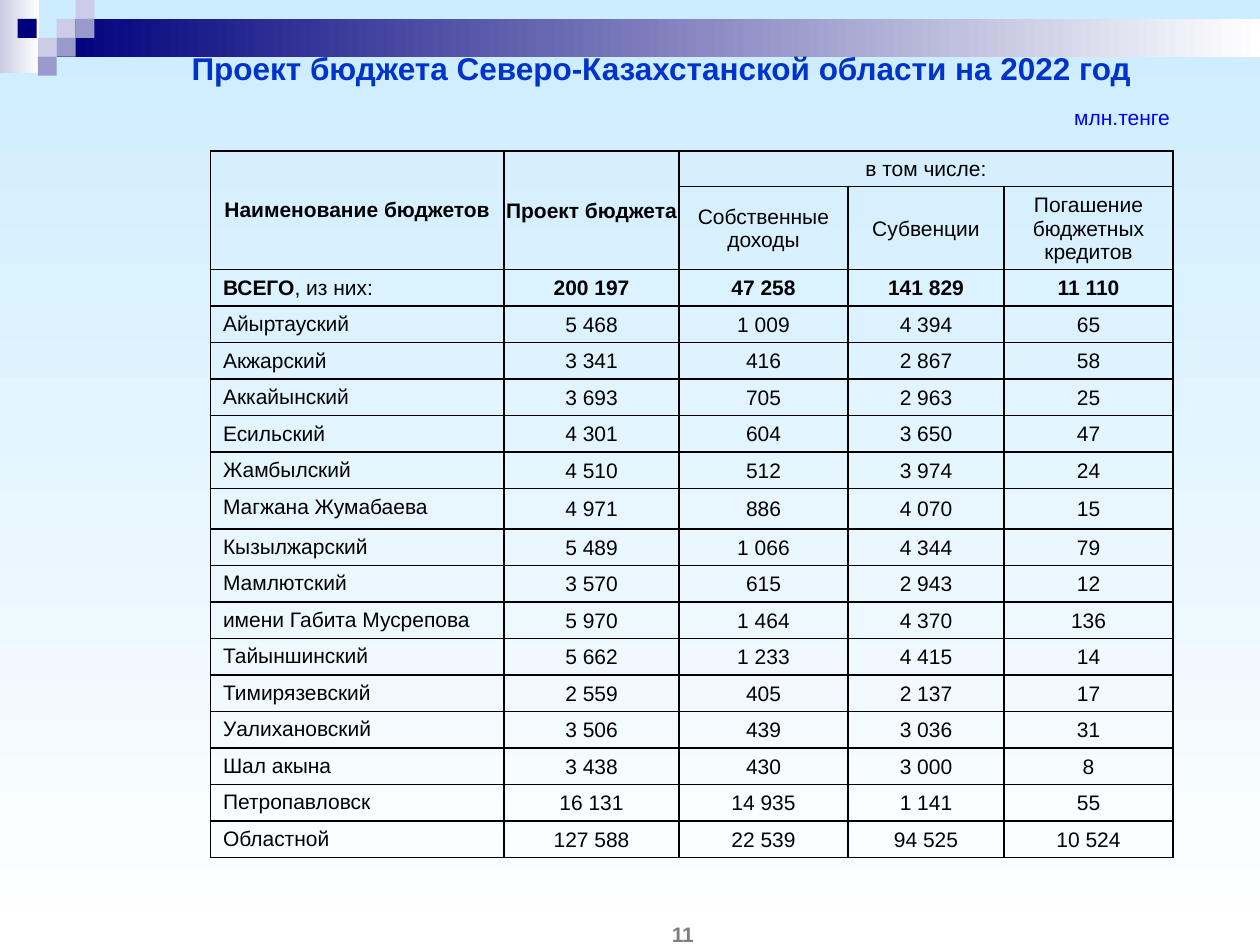
import pptx
import pptx.dml.color
import pptx.enum.shapes
import pptx.enum.text
import pptx.oxml
import pptx.oxml.ns
import pptx.util

Inches = pptx.util.Inches
Align = pptx.enum.text.PP_ALIGN
Anchor = pptx.enum.text.MSO_ANCHOR

COLORS = {
    "sky": "CCECFF", "white": "FFFFFF", "black": "000000", "navy": "00007D",
    "lilac": "CCCCE6", "violet": "9999CC", "title": "0033CC",
    "unit": "0000FF", "number": "7F7F7F",
}

# Small squares of the corner ornament: left, top, colour
SQUARES = [
    (0.45, 0.15, "lilac"), (0.6, 0, "lilac"), (0.6, 0.15, "violet"),
    (0.3, 0.3, "lilac"), (0.14, 0.15, "navy"), (0.45, 0.3, "violet"),
    (0.3, 0.45, "violet"),
]

COLUMN_WIDTHS = [2.33, 1.39, 1.34, 1.24, 1.34]
HEADER_HEIGHTS = [0.28, 0.66]
ROW_HEIGHT = 0.29
TALL_ROW, TALL_HEIGHT = "Магжана Жумабаева", 0.32
NAME_INSETS = (0.1, 0.05, 0.1, 0.05)
VALUE_INSETS = (0.01, 0.01, 0.01, 0)

# Header cells: row, column, last row, last column, text, bold, insets
HEADERS = [
    (0, 0, 1, 0, "Наименование бюджетов", True, NAME_INSETS),
    (0, 1, 1, 1, "Проект бюджета", True, VALUE_INSETS),
    (0, 2, 0, 4, "в том числе:", False, VALUE_INSETS),
    (1, 2, 1, 2, "Собственные доходы", False, VALUE_INSETS),
    (1, 3, 1, 3, "Субвенции", False, VALUE_INSETS),
    (1, 4, 1, 4, "Погашение бюджетных кредитов", False, VALUE_INSETS),
]

TOTAL_NAME = [("ВСЕГО", True), (", из них:", False)]
TOTAL_VALUES = ["200 197", "47 258", "141 829", "11 110"]
BUDGETS = [
    ("Айыртауский", "5 468", "1 009", "4 394", "65"),
    ("Акжарский", "3 341", "416", "2 867", "58"),
    ("Аккайынский", "3 693", "705", "2 963", "25"),
    ("Есильский", "4 301", "604", "3 650", "47"),
    ("Жамбылский", "4 510", "512", "3 974", "24"),
    ("Магжана Жумабаева", "4 971", "886", "4 070", "15"),
    ("Кызылжарский", "5 489", "1 066", "4 344", "79"),
    ("Мамлютский", "3 570", "615", "2 943", "12"),
    ("имени Габита Мусрепова", "5 970", "1 464", "4 370", "136"),
    ("Тайыншинский", "5 662", "1 233", "4 415", "14"),
    ("Тимирязевский", "2 559", "405", "2 137", "17"),
    ("Уалихановский", "3 506", "439", "3 036", "31"),
    ("Шал акына", "3 438", "430", "3 000", "8"),
    ("Петропавловск", "16 131", "14 935", "1 141", "55"),
    ("Областной", "127 588", "22 539", "94 525", "10 524"),
]


def rgb(name):
    return pptx.dml.color.RGBColor.from_string(COLORS[name])


def write_text(frame, text, size=12, color="black", bold=False, align=Align.CENTER):
    """Fill the first paragraph; text is a string or a list of (string, bold)."""
    frame.word_wrap = True
    para = frame.paragraphs[0]
    para.alignment = align
    pieces = [(text, bold)] if isinstance(text, str) else text
    for words, weight in pieces:
        span = para.add_run()
        span.text = words
        span.font.name = "Arial"
        span.font.size = pptx.util.Pt(size)
        span.font.bold = weight
        span.font.color.rgb = rgb(color)


def set_insets(target, insets):
    target.margin_left, target.margin_top, target.margin_right, target.margin_bottom = map(Inches, insets)


def fill_gradient(fill, start, end, angle=0):
    fill.gradient()
    fill.gradient_angle = angle
    for stop, position, color in zip(fill.gradient_stops, (0, 1), (start, end)):
        stop.position = position
        stop.color.rgb = rgb(color)


def add_block(page, left, top, width, height, color, fade_to=None):
    block = page.shapes.add_shape(
        pptx.enum.shapes.MSO_SHAPE.RECTANGLE,
        Inches(left), Inches(top), Inches(width), Inches(height))
    block.shadow.inherit = False
    block.line.fill.background()
    if fade_to:
        fill_gradient(block.fill, color, fade_to)
    else:
        block.fill.solid()
        block.fill.fore_color.rgb = rgb(color)


def add_ornament(page):
    add_block(page, 0, 0, 0.31, 0.58, "lilac", fade_to="white")
    add_block(page, 0.45, 0.15, 9.55, 0.3, "navy", fade_to="white")
    for left, top, color in SQUARES:
        add_block(page, left, top, 0.15, 0.15, color)


def add_title(page, text):
    title = page.shapes.title
    title.left, title.top, title.width, title.height = map(Inches, (1.42, 0.46, 7.88, 0.43))
    frame = title.text_frame
    frame.auto_size = pptx.enum.text.MSO_AUTO_SIZE.NONE
    frame.vertical_anchor = Anchor.MIDDLE
    set_insets(frame, (0, 0.05, 0.22, 0.32))
    write_text(frame, text, size=18, color="title", bold=True)
    # Bring the title in front of the ornament
    page.shapes._spTree.append(title._element)


def add_label(page, text, left, top, width, height, anchor=Anchor.TOP, **text_format):
    box = page.shapes.add_textbox(Inches(left), Inches(top), Inches(width), Inches(height))
    set_insets(box.text_frame, (0, 0, 0, 0))
    box.text_frame.vertical_anchor = anchor
    write_text(box.text_frame, text, **text_format)


def set_borders(cell):
    properties = cell._tc.get_or_add_tcPr()
    for index, side in enumerate(("lnL", "lnR", "lnT", "lnB")):
        line = pptx.oxml.parse_xml(
            f'<a:{side} {pptx.oxml.ns.nsdecls("a")} w="12700"><a:solidFill>'
            f'<a:srgbClr val="{COLORS["black"]}"/></a:solidFill></a:{side}>')
        properties.insert(index, line)


def write_cell(cell, text, insets=VALUE_INSETS, anchor=Anchor.MIDDLE, **text_format):
    set_insets(cell, insets)
    cell.vertical_anchor = anchor
    write_text(cell.text_frame, text, **text_format)


def add_budget_table(page):
    heights = HEADER_HEIGHTS + [ROW_HEIGHT] + [
        TALL_HEIGHT if budget[0] == TALL_ROW else ROW_HEIGHT for budget in BUDGETS]
    table = page.shapes.add_table(
        len(heights), len(COLUMN_WIDTHS), Inches(1.67), Inches(1.2),
        Inches(sum(COLUMN_WIDTHS)), Inches(sum(heights))).table
    table.first_row = table.horz_banding = False
    for column, width in zip(table.columns, COLUMN_WIDTHS):
        column.width = Inches(width)
    for row, height in zip(table.rows, heights):
        row.height = Inches(height)
    for cell in table.iter_cells():
        cell.fill.background()
        set_borders(cell)

    # Header
    for row, column, last_row, last_column, text, bold, insets in HEADERS:
        cell = table.cell(row, column)
        if (row, column) != (last_row, last_column):
            cell.merge(table.cell(last_row, last_column))
        write_cell(cell, text, insets=insets, bold=bold)

    # Total and budgets
    for row, (name, *values) in enumerate([(TOTAL_NAME, *TOTAL_VALUES), *BUDGETS], len(HEADER_HEIGHTS)):
        write_cell(table.cell(row, 0), name, insets=NAME_INSETS, anchor=Anchor.TOP, align=Align.LEFT)
        for column, value in enumerate(values, 1):
            write_cell(table.cell(row, column), value, bold=name is TOTAL_NAME)


def main():
    deck = pptx.Presentation()
    deck.slide_width, deck.slide_height = Inches(10), Inches(7.5)
    page = deck.slides.add_slide(deck.slide_layouts[5])
    fill_gradient(page.background.fill, "sky", "white", angle=270)
    add_ornament(page)
    add_title(page, "Проект бюджета Северо-Казахстанской области на 2022 год")
    add_budget_table(page)
    add_label(page, "млн.тенге", 8.08, 0.83, 1.65, 0.2, color="unit")
    add_label(page, "11", 4.42, 7.32, 2, 0.18, anchor=Anchor.MIDDLE, color="number", bold=True)
    deck.save("out.pptx")


if __name__ == "__main__":
    main()
